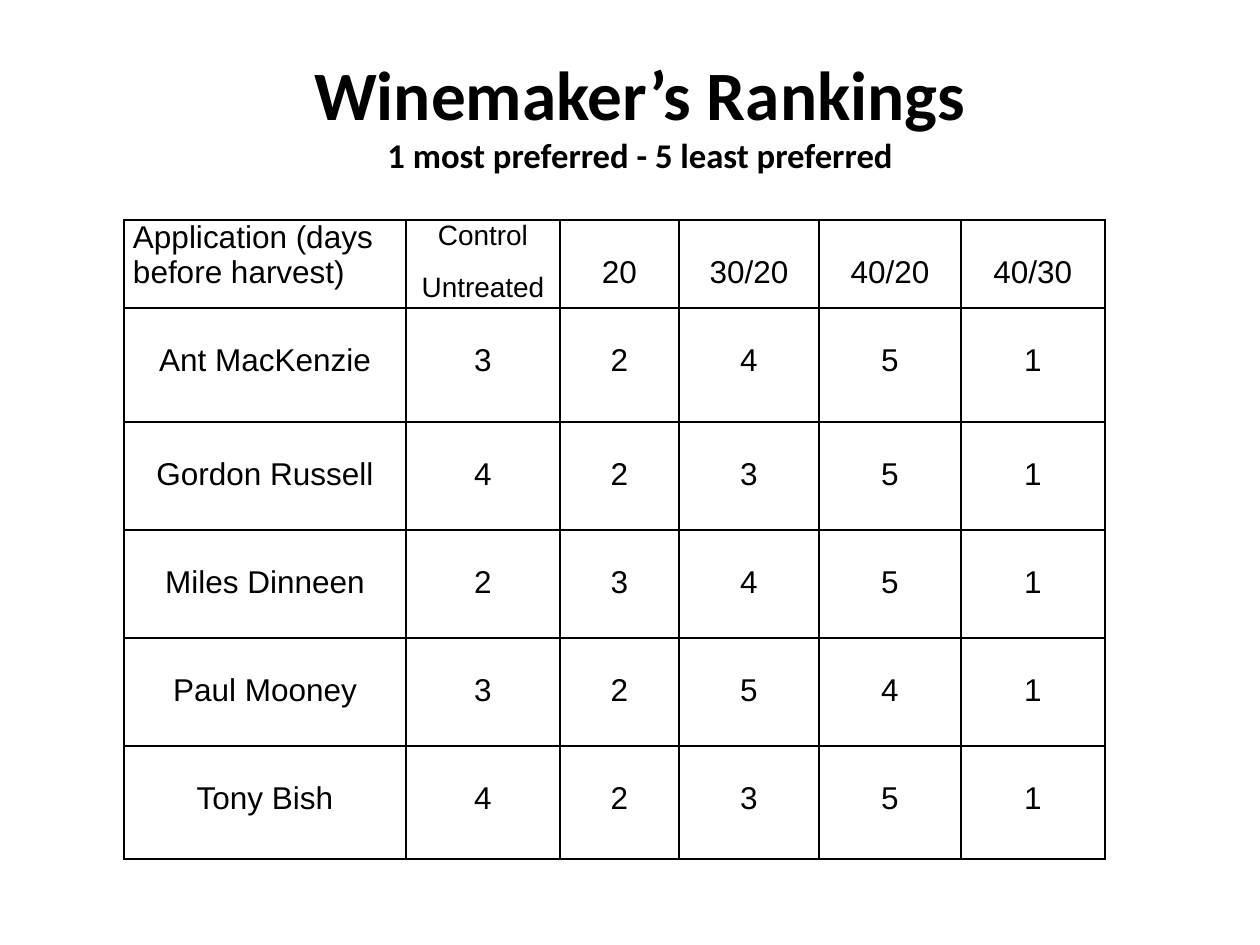
from pptx import Presentation
from pptx import util as u
from pptx.dml.color import RGBColor
from pptx.enum import text
from pptx.oxml import parse_xml
from pptx.oxml.ns import nsdecls

PX = 914400 // 126
THEME = {
    "ink": "000000", "paper": "FFFFFF",
    "heading_font": "Calibri", "body_font": "Arial",
    "title": 39.6, "subtitle": 19.8, "body": 18, "small": 16, "border": 1,
}
ALIGN = text.PP_ALIGN


def write(paragraph, words, size, font, bold=False, align=ALIGN.CENTER):
    paragraph.alignment = align
    run = paragraph.add_run()
    run.text = words
    run.font.color.rgb = RGBColor.from_string(THEME["ink"])
    for key, value in {"name": font, "size": u.Pt(size), "bold": bold}.items():
        setattr(run.font, key, value)


def draw_borders(cell):
    properties = cell._tc.get_or_add_tcPr()
    for position, side in enumerate(("lnL", "lnR", "lnT", "lnB")):
        properties.insert(position, parse_xml(
            f'<a:{side} {nsdecls("a")} w="{u.Pt(THEME["border"])}"><a:solidFill>'
            f'<a:srgbClr val="{THEME["ink"]}"/></a:solidFill></a:{side}>'))


deck = Presentation()
deck.slide_width, deck.slide_height = 1260 * PX, 945 * PX
slide = deck.slides.add_slide(deck.slide_layouts[6])

heading = slide.shapes.add_textbox(74 * PX, 37 * PX, 1132 * PX, 153 * PX).text_frame
heading_format = {"word_wrap": True, "vertical_anchor": text.MSO_ANCHOR.MIDDLE}
for key, value in heading_format.items():
    setattr(heading, key, value)
write(heading.paragraphs[0], "Winemaker’s Rankings",
      THEME["title"], THEME["heading_font"], True)
write(heading.add_paragraph(), "1 most preferred - 5 least preferred",
      THEME["subtitle"], THEME["heading_font"], True)

rankings = [
    ["Application (days before harvest)", "Control\nUntreated",
     "20", "30/20", "40/20", "40/30"],
    ["Ant MacKenzie", "3", "2", "4", "5", "1"],
    ["Gordon Russell", "4", "2", "3", "5", "1"],
    ["Miles Dinneen", "2", "3", "4", "5", "1"],
    ["Paul Mooney", "3", "2", "5", "4", "1"],
    ["Tony Bish", "4", "2", "3", "5", "1"],
]
column_widths = [282, 154, 119, 140, 142, 144]
row_heights = [84, 114, 108, 108, 108, 113]

grid = slide.shapes.add_table(
    len(row_heights), len(column_widths), 124 * PX, 220 * PX,
    sum(column_widths) * PX, sum(row_heights) * PX).table
grid.first_row = grid.horz_banding = False
for column, width in zip(grid.columns, column_widths):
    column.width = width * PX
for row, height in zip(grid.rows, row_heights):
    row.height = height * PX

for r, entries in enumerate(rankings):
    for c, entry in enumerate(entries):
        cell = grid.cell(r, c)
        top_aligned = r == 0 and c < 2
        cell_format = {
            "margin_left": 9 * PX, "margin_right": 9 * PX,
            "margin_top": 0 if top_aligned else 35 * PX, "margin_bottom": 0,
            "vertical_anchor": text.MSO_ANCHOR.TOP,
        }
        for key, value in cell_format.items():
            setattr(cell, key, value)
        cell.fill.solid()
        cell.fill.fore_color.rgb = RGBColor.from_string(THEME["paper"])
        draw_borders(cell)
        lines = entry.split("\n")
        size = THEME["small"] if len(lines) > 1 else THEME["body"]
        align = ALIGN.LEFT if r == c == 0 else ALIGN.CENTER
        for i, line in enumerate(lines):
            frame = cell.text_frame
            paragraph = frame.add_paragraph() if i else frame.paragraphs[0]
            paragraph.space_before = u.Pt(12)
            write(paragraph, line, size, THEME["body_font"], align=align)

deck.save("out.pptx")
